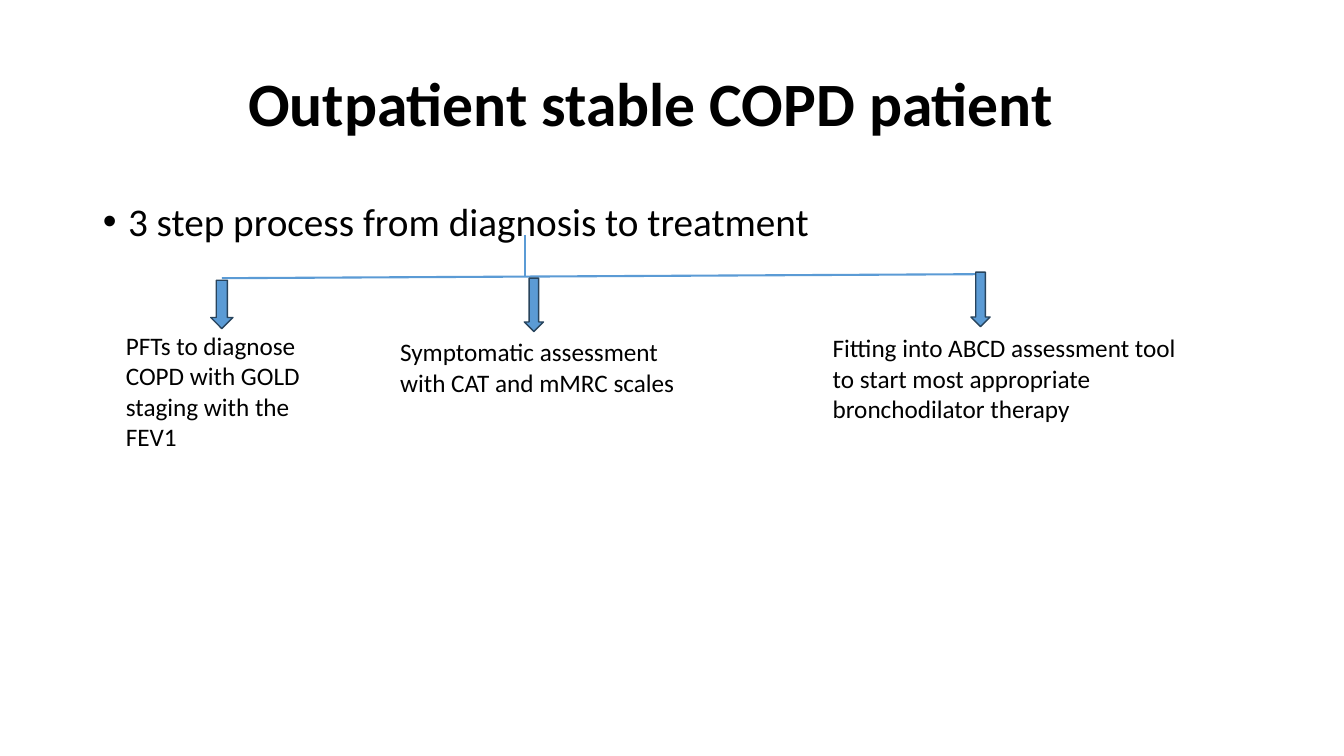
from pptx import Presentation
from pptx.dml.color import RGBColor
from pptx.enum.shapes import MSO_CONNECTOR, MSO_SHAPE
from pptx.enum.text import MSO_ANCHOR, MSO_AUTO_SIZE, PP_ALIGN
from pptx.oxml.ns import qn
from pptx.util import Inches, Pt
from lxml.etree import SubElement

# Content: text and place (left, top, width, height)
TITLE = ("Outpatient stable COPD patient", (2.36, 0.33, 11.5, 1.45))
LEAD = ("3 step process from diagnosis to treatment", (0.92, 2, 10.04, 0.49))
STEPS = [  # text, its place, place of the arrow above it
    ("PFTs to diagnose COPD with GOLD staging with the FEV1",
     (1.15, 3.23, 2.27, 1.31), (2.09, 2.78, 0.22, 0.48)),
    ("Symptomatic assessment with CAT and mMRC scales",
     (3.87, 3.29, 3.17, 0.71), (5.2, 2.76, 0.19, 0.53)),
    ("Fitting into ABCD assessment tool to start most appropriate "
     "bronchodilator therapy",
     (8.16, 3.25, 3.61, 1.01), (9.63, 2.7, 0.19, 0.54)),
]
LINES = [(2.2, 2.76, 9.75, 2.72), (5.21, 2.33, 5.21, 2.75)]  # branch, stem
BLUE, EDGE, BLACK = "5B9BD5", "28445D", "000000"

# Formats
HEAD = {"size": Pt(44), "bold": True}
LIST = {"size": Pt(28), "bold": False}
NOTE = {"size": Pt(18), "bold": False}


def color(code):
    return RGBColor.from_string(code)


def inches(place):
    return [Inches(n) for n in place]


def move(shape, place):
    for name, size in zip(("left", "top", "width", "height"), inches(place)):
        setattr(shape, name, size)


def write(shape, text, font, fit=MSO_AUTO_SIZE.NONE, **para):
    frame = shape.text_frame
    frame.word_wrap = True
    frame.auto_size = fit
    frame.text = text
    line = frame.paragraphs[0]
    for name, value in para.items():
        setattr(line, name, value)
    run = line.runs[0]
    for name, value in {"name": "Calibri", **font}.items():
        setattr(run.font, name, value)
    run.font.color.rgb = color(BLACK)
    return line


deck = Presentation()
deck.slide_width, deck.slide_height = inches((13.33, 7.5))
slide = deck.slides.add_slide(deck.slide_layouts[1])
shapes = slide.shapes

# Title and lead bullet
title, body = shapes.title, slide.placeholders[1]
move(title, TITLE[1])
write(title, TITLE[0], HEAD, alignment=PP_ALIGN.LEFT, line_spacing=0.9)
title.text_frame.vertical_anchor = MSO_ANCHOR.MIDDLE
move(body, LEAD[1])
lead = write(body, LEAD[0], LIST, line_spacing=0.8, space_before=Pt(10))
props = lead._p.get_or_add_pPr()
props.set("marL", str(Inches(0.25)))
props.set("indent", str(Inches(-0.25)))
SubElement(props, qn("a:buChar")).set("char", "•")

# Step texts
for text, place, _ in STEPS:
    box = shapes.add_textbox(*inches(place))
    write(box, text, NOTE, MSO_AUTO_SIZE.SHAPE_TO_FIT_TEXT)

# Branch and stem
for ends in LINES:
    link = shapes.add_connector(MSO_CONNECTOR.STRAIGHT, *inches(ends))
    link.line.color.rgb = color(BLUE)
    link.line.width = Pt(1.5)
    SubElement(link._element.spPr, qn("a:effectLst"))

# Arrows down to the steps
for _, _, place in STEPS:
    arrow = shapes.add_shape(MSO_SHAPE.DOWN_ARROW, *inches(place))
    arrow.shadow.inherit = False
    arrow.fill.solid()
    arrow.fill.fore_color.rgb = color(BLUE)
    arrow.line.color.rgb = color(EDGE)
    arrow.line.width = Pt(1)

deck.save("out.pptx")
